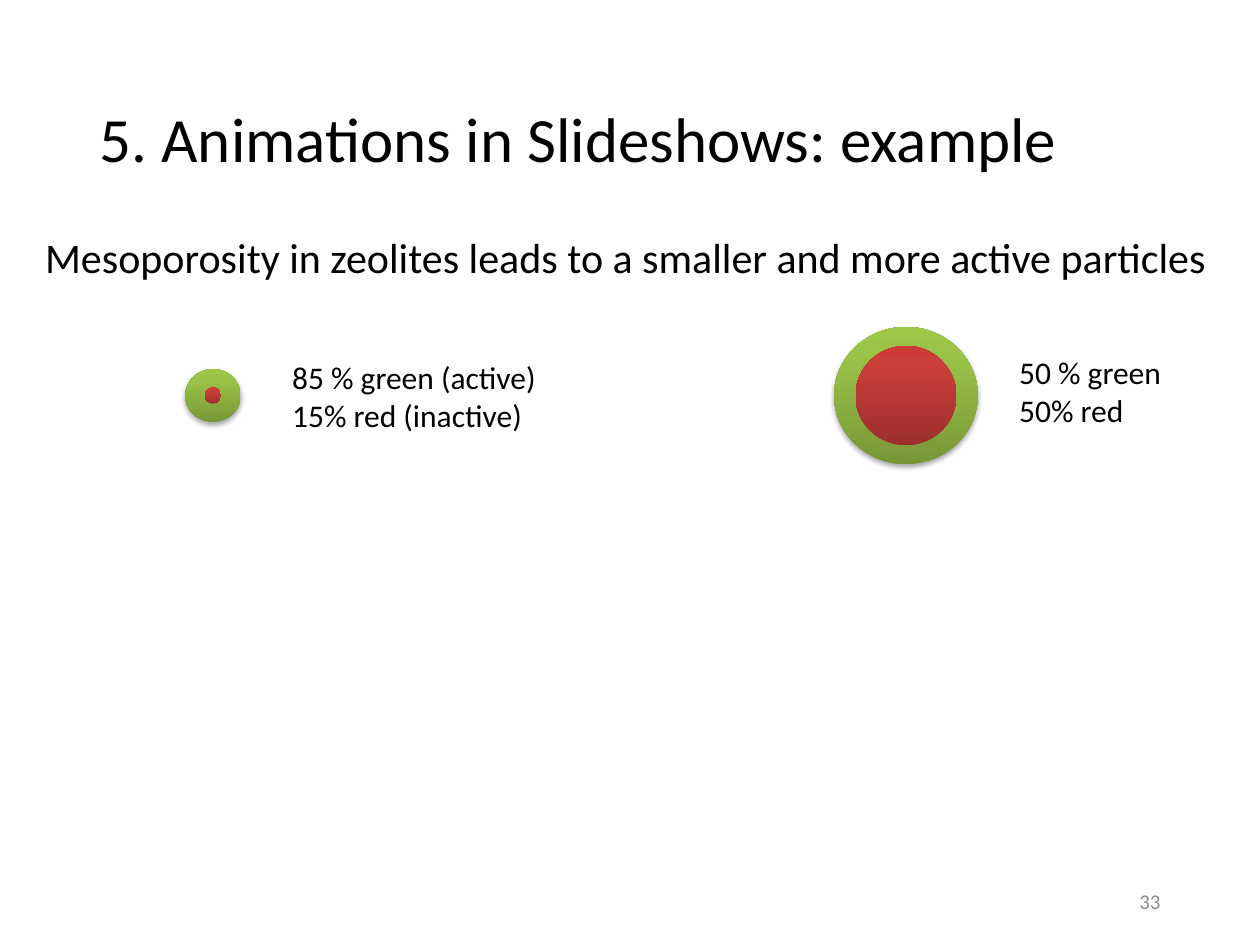
import copy

import lxml.etree
import pptx
import pptx.dml.color
import pptx.enum.shapes
import pptx.enum.text
import pptx.oxml.ns
import pptx.util

RGBColor = pptx.dml.color.RGBColor
BLACK = RGBColor(0x00, 0x00, 0x00)
GREY = RGBColor(0x8C, 0x8C, 0x8C)
GREEN = [RGBColor(0x77, 0x97, 0x37), RGBColor(0x9B, 0xC3, 0x48), RGBColor(0x9D, 0xC7, 0x46)]
RED = [RGBColor(0x9C, 0x2F, 0x2D), RGBColor(0xCB, 0x3E, 0x3A), RGBColor(0xCE, 0x3B, 0x37)]
STOPS = [0, 0.8, 1]
COLUMNS, ROWS = 100, 75
ALIGN = pptx.enum.text.PP_ALIGN
ANCHOR = pptx.enum.text.MSO_ANCHOR
AUTO_SIZE = pptx.enum.text.MSO_AUTO_SIZE
qn = pptx.oxml.ns.qn


class SlideBuilder:
    font_name = "Calibri"

    def __init__(self, deck):
        self.column = deck.slide_width / COLUMNS
        self.row = deck.slide_height / ROWS
        self.slide = deck.slides.add_slide(deck.slide_layouts[5])

    def place(self, left, top, width, height):
        return (round(left * self.column), round(top * self.row),
                round(width * self.column), round(height * self.row))

    def format(self, frame, size, color, align):
        for paragraph in frame.paragraphs:
            paragraph.alignment = align
            for run in paragraph.runs:
                run.font.name = self.font_name
                run.font.size = pptx.util.Pt(size)
                run.font.color.rgb = color

    def title(self, wording, area):
        heading = self.slide.shapes.title
        heading.left, heading.top, heading.width, heading.height = self.place(*area)
        frame = heading.text_frame
        frame.text = wording
        frame.vertical_anchor = ANCHOR.MIDDLE
        frame.paragraphs[0].line_spacing = 0.9
        self.format(frame, 36, BLACK, ALIGN.LEFT)

    def text(self, wording, area, size, color=BLACK, align=ALIGN.LEFT,
             anchor=ANCHOR.TOP, auto_size=AUTO_SIZE.SHAPE_TO_FIT_TEXT):
        frame = self.slide.shapes.add_textbox(*self.place(*area)).text_frame
        frame.word_wrap = True
        frame.auto_size = auto_size
        frame.vertical_anchor = anchor
        frame.text = wording
        self.format(frame, size, color, align)

    def ellipse(self, group, center, size, colors):
        (x, y), (width, height) = center, size
        oval = group.shapes.add_shape(
            pptx.enum.shapes.MSO_SHAPE.OVAL,
            *self.place(x - width / 2, y - height / 2, width, height))
        oval.shadow.inherit = False
        oval.line.fill.background()
        oval.fill.gradient()
        oval.fill.gradient_angle = 90
        stop_list = oval._element.spPr.find(".//" + qn("a:gsLst"))
        stop_list.insert(1, copy.deepcopy(stop_list[0]))
        for stop, position, color in zip(oval.fill.gradient_stops, STOPS, colors):
            stop.position = position
            stop.color.rgb = color
        return oval

    def drop_shadow(self, oval):
        effects = oval._element.spPr.find(qn("a:effectLst"))
        shadow = lxml.etree.SubElement(
            effects, qn("a:outerShdw"), blurRad=str(pptx.util.Pt(3.1)),
            dist=str(pptx.util.Pt(1.8)), dir="5400000", rotWithShape="0")
        black = lxml.etree.SubElement(shadow, qn("a:srgbClr"), val=str(BLACK))
        lxml.etree.SubElement(black, qn("a:alpha"), val="35000")

    def particle(self, center, shell_size, core_size):
        group = self.slide.shapes.add_group_shape()
        self.drop_shadow(self.ellipse(group, center, shell_size, GREEN))
        self.ellipse(group, center, core_size, RED)


def main():
    deck = pptx.Presentation()
    deck.slide_width = pptx.util.Inches(10)
    deck.slide_height = pptx.util.Inches(7.5)
    builder = SlideBuilder(deck)
    builder.title("5. Animations in Slideshows: example", (6.9, 4, 86.2, 14.5))
    builder.text("Mesoporosity in zeolites leads to a smaller and more active particles",
                 (2.6, 17.9, 94.7, 5), 24)
    builder.particle((16.9, 31.4), (4.4, 4.2), (1.3, 1.3))
    builder.particle((71.9, 31.4), (11.4, 10.9), (8, 7.9))
    builder.text("50 % green\n50% red", (79.9, 27.5, 22.5, 7.1), 18)
    builder.text("85 % green (active)\n15% red (inactive)", (22.2, 27.9, 22.5, 7.1), 18)
    builder.text("33", (70.6, 69.5, 22.5, 4), 12, GREY, ALIGN.RIGHT,
                 ANCHOR.MIDDLE, AUTO_SIZE.NONE)
    deck.save("out.pptx")


if __name__ == "__main__":
    main()
